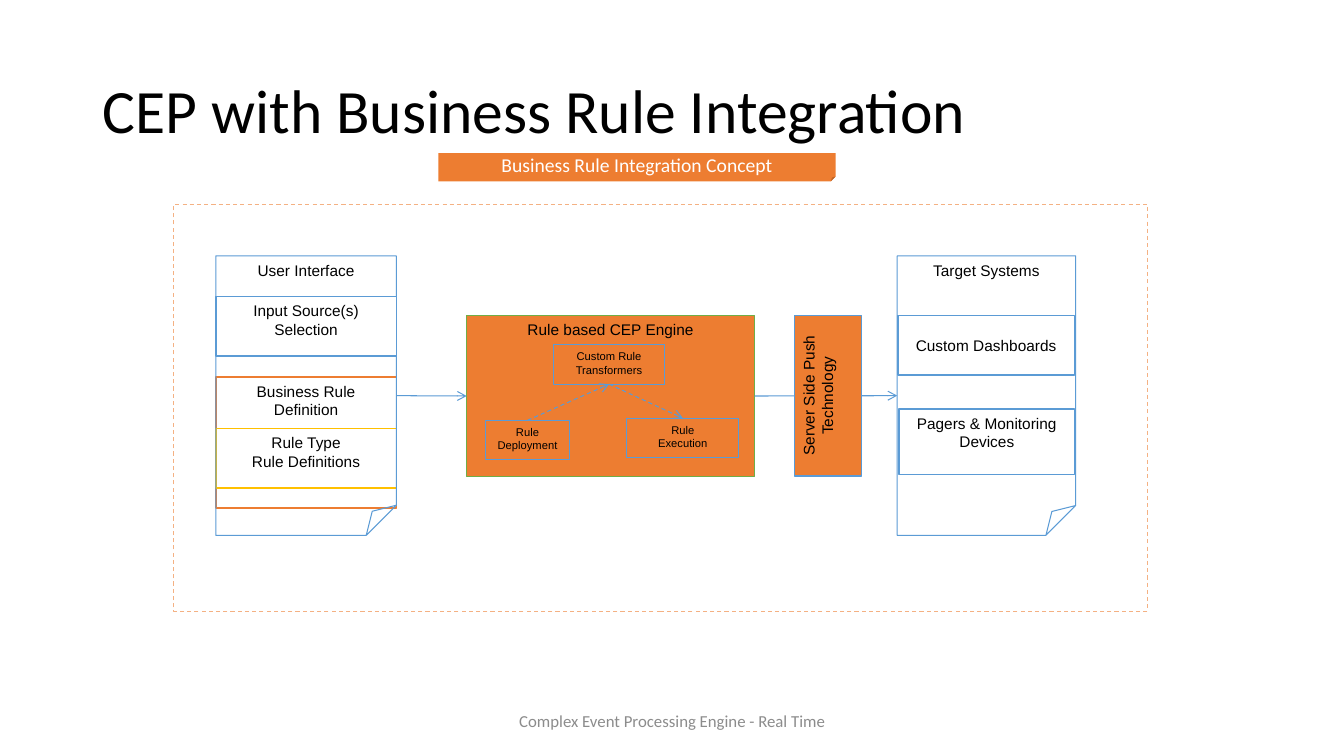
from lxml.etree import SubElement
from pptx import Presentation
from pptx.dml.color import RGBColor
from pptx.enum.dml import MSO_LINE
from pptx.enum.shapes import MSO_CONNECTOR, MSO_SHAPE
from pptx.enum.text import MSO_ANCHOR as ANCHOR, MSO_AUTO_SIZE, PP_ALIGN as ALIGN
from pptx.oxml.ns import qn
from pptx.util import Cm, Pt

COLORS = {"black": "000000", "white": "FFFFFF", "grey": "8C8C8C", "orange": "ED7D31",
          "peach": "F4B183", "blue": "5B9BD5", "green": "70AD47", "gold": "FFC000"}

TITLE = "CEP with Business Rule Integration"
BANNER = "Business Rule Integration Concept"
FOOTER = "Complex Event Processing Engine - Real Time"

RECT, FOLDED = MSO_SHAPE.RECTANGLE, MSO_SHAPE.FOLDED_CORNER
TOP, LEFT, BOTTOM, RIGHT = range(4)

# Boxes from back to front: name, text, (left, top, width, height) in cm,
# shape, fill, line, line width, text size
BOXES = [
    ("definition", "Business Rule Definition", (5.44, 9.5, 4.55, 3.3),
     RECT, "white", "orange", 1, 11),
    ("engine", "Rule based CEP Engine", (11.76, 7.95, 7.26, 4.06),
     RECT, "orange", "green", 1, 11),
    ("rule type", "Rule Type\nRule Definitions", (5.44, 10.8, 4.55, 1.5),
     RECT, "white", "gold", 1, 11),
    ("interface", "User Interface", (5.44, 6.45, 4.55, 7.04),
     FOLDED, None, "blue", 0.75, 11),
    ("input", "Input Source(s) Selection", (5.44, 7.47, 4.55, 1.5),
     RECT, "white", "blue", 1, 11),
    ("targets", "Target Systems", (22.61, 6.45, 4.5, 7.04),
     FOLDED, None, "blue", 0.75, 11),
    ("dashboards", "Custom Dashboards", (22.63, 7.95, 4.45, 1.5),
     RECT, "white", "blue", 1, 11),
    ("pagers", "Pagers & Monitoring Devices", (22.66, 10.31, 4.42, 1.65),
     RECT, "white", "blue", 1, 11),
    ("transformers", "Custom Rule Transformers", (13.94, 8.69, 2.82, 0.99),
     RECT, None, "blue", 0.75, 8),
    ("deployment", "Rule Deployment", (12.24, 10.59, 2.11, 0.99),
     RECT, None, "blue", 0.75, 8),
    ("execution", "Rule\nExecution", (15.8, 10.54, 2.82, 0.99),
     RECT, None, "blue", 0.75, 8),
]
PUSH = ("Server Side Push Technology", (18.85, 9.12, 4.04, 1.7),
        RECT, "orange", "blue", 1, 11)
FRAME = ("", (4.37, 5.16, 24.56, 10.24), RECT, None, "peach", 0.75, 11)

# Arrows: from box, side, to box, side, dashed
ARROWS = [
    ("interface", RIGHT, "engine", LEFT, False),
    ("engine", RIGHT, "targets", LEFT, False),
    ("transformers", BOTTOM, "execution", TOP, True),
    ("deployment", TOP, "transformers", BOTTOM, True),
]


def color(name):
    return RGBColor.from_string(COLORS[name])


def write(s, text, size, font="Arial", ink="black", align=ALIGN.CENTER, anchor=ANCHOR.TOP):
    tf = s.text_frame
    tf.text = text
    tf.word_wrap = True
    tf.auto_size = MSO_AUTO_SIZE.NONE
    tf.vertical_anchor = anchor
    for p in tf.paragraphs:
        p.alignment = align
        for r in p.runs:
            r.font.size, r.font.name = Pt(size), font
            r.font.color.rgb = color(ink)
    return tf


def add_box(text, place, shape, fill, line, width, size):
    s = slide.shapes.add_shape(shape, *map(Cm, place))
    s.shadow.inherit = False
    if fill:
        s.fill.solid()
        s.fill.fore_color.rgb = color(fill)
    else:
        s.fill.background()
    if line:
        s.line.color.rgb = color(line)
        s.line.width = Pt(width)
    else:
        s.line.fill.background()
    if text:
        write(s, text, size)
    return s


def add_arrow(start, start_side, end, end_side, dashed):
    c = slide.shapes.add_connector(MSO_CONNECTOR.STRAIGHT, 0, 0, 0, 0)
    c.begin_connect(start, start_side)
    c.end_connect(end, end_side)
    c.line.color.rgb = color("blue")
    c.line.width = Pt(0.75)
    if dashed:
        c.line.dash_style = MSO_LINE.DASH
    SubElement(c.line._get_or_add_ln(), qn("a:tailEnd"), type="arrow")
    SubElement(c._element.spPr, qn("a:effectLst"))


prs = Presentation()
prs.slide_width, prs.slide_height = Cm(33.87), Cm(19.05)
slide = prs.slides.add_slide(prs.slide_layouts[5])

# Title
title = slide.shapes.title
title.left, title.top, title.width, title.height = map(Cm, (2.34, 1.02, 29.21, 3.68))
tf = write(title, TITLE, 44, "Calibri", align=ALIGN.LEFT, anchor=ANCHOR.MIDDLE)
tf.paragraphs[0].line_spacing = 0.9

# Footer
footer = slide.shapes.add_textbox(*map(Cm, (11.23, 17.65, 11.43, 1.02)))
write(footer, FOOTER, 12, "Calibri", "grey", anchor=ANCHOR.MIDDLE)

# Banner
banner = add_box("", (11.05, 3.86, 10.01, 0.71), FOLDED, "orange", None, 0, 14)
tf = write(banner, BANNER, 14, "Calibri", "white", anchor=ANCHOR.MIDDLE)
tf.margin_left = tf.margin_top = tf.margin_right = tf.margin_bottom = 0

# Diagram
boxes = {name: add_box(*rest) for name, *rest in BOXES}
boxes["dashboards"].text_frame.vertical_anchor = ANCHOR.MIDDLE
for start, start_side, end, end_side, dashed in ARROWS:
    add_arrow(boxes[start], start_side, boxes[end], end_side, dashed)

# Dashed frame and upright push box
add_box(*FRAME).line.dash_style = MSO_LINE.DASH
add_box(*PUSH).rotation = 270

prs.save("out.pptx")
